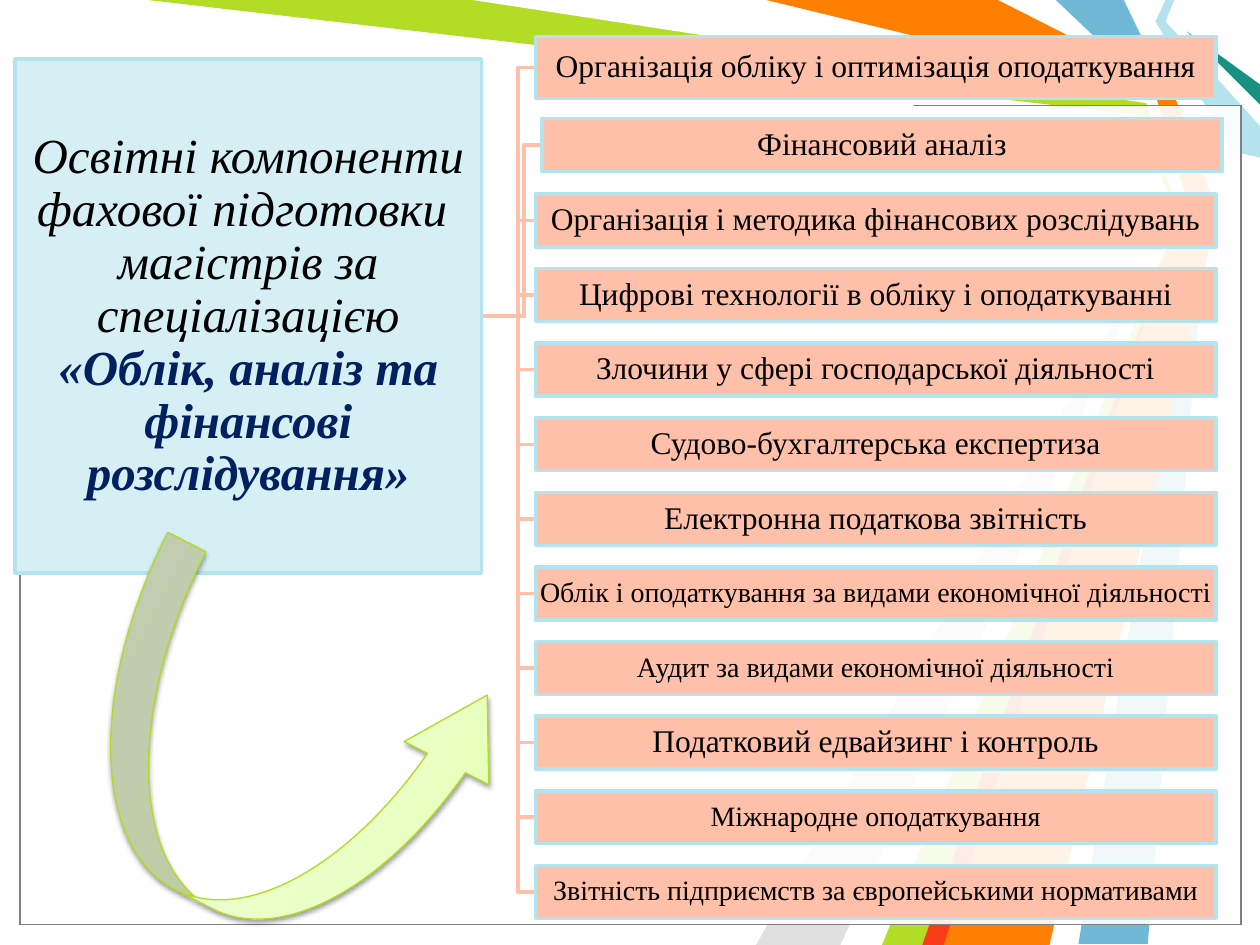
from pptx import Presentation
from pptx.dml.color import RGBColor
from pptx.enum.shapes import MSO_SHAPE as Preset
from pptx.enum.text import MSO_ANCHOR as Anchor, MSO_AUTO_SIZE as AutoSize, PP_ALIGN as Align
from pptx.oxml import parse_xml
from pptx.oxml.ns import nsdecls, qn
from pptx.util import Inches, Pt

FONT = "Times New Roman"
COLORS = {
    "blue": "6FB9D7", "lime": "B3DC27", "grey": "E0E0E0", "white": "FFFFFF",
    "pale_blue": "B4E3EE", "teal": "189180", "orange": "FF7F00", "red": "F93D17",
    "black": "000000", "frame": "808080", "peach": "FFC0AA", "topic": "D6EFF5",
    "navy": "002060", "arrow_line": "B1DC22",
}

TOPIC = [
    [("Освітні компоненти фахової підготовки ", "black", False)],
    [("магістрів за спеціалізацією ", "black", False),
     ("«Облік, аналіз та фінансові розслідування»", "navy", True)],
]
COURSES = [
    ("Організація обліку і оптимізація оподаткування", 18),
    ("Фінансовий аналіз", 18),
    ("Організація і методика фінансових розслідувань", 18),
    ("Цифрові технології в обліку і оподаткуванні", 18),
    ("Злочини у сфері господарської діяльності", 18),
    ("Судово-бухгалтерська експертиза", 18),
    ("Електронна податкова звітність", 18),
    ("Облік і оподаткування за видами економічної діяльності", 16),
    ("Аудит за видами економічної діяльності", 16),
    ("Податковий едвайзинг і контроль", 18),
    ("Міжнародне оподаткування", 16),
    ("Звітність підприємств за європейськими нормативами", 16),
]
RIBBONS = [
    ("blue", [(8.92, 0), (9.29, 0.77), (9.58, 1.67), (9.11, 7.49), (8.56, 7.49),
              (9.5, 1.67), (9.17, 0.75), (8.38, 0)]),
    ("lime", [(1.17, 0), (3.83, 0), (9.14, 0.78), (9.42, 1.69), (7.42, 7.5),
              (6.92, 7.5), (9.35, 1.73), (9.01, 0.91)]),
    ("grey", [(6.67, 7.5), (9.27, 1.81), (6, 7.5)]),
    ("white", [(3.75, 0), (9.1, 0.82), (9.32, 1.62), (6.75, 7.5), (7, 7.5),
               (9.41, 1.58), (9.17, 0.75), (6, 0)]),
    ("pale_blue", [(9.25, 0), (9.17, 0.17), (9.78, 1.2), (10, 1.25), (10, 1),
                   (9.25, 0.17), (9.32, 0)]),
    ("teal", [(10, 0.83), (9.42, 0.25), (10, 0.67)]),
    ("orange", [(6.08, 0), (7.92, 0), (9.3, 0.7), (9.66, 1.69), (8.33, 7.5),
                (7.33, 7.5), (9.42, 1.58), (9.17, 0.75)]),
    ("red", [(7.32, 7.5), (9.32, 1.83), (7.49, 7.5)]),
]
TOPIC_AREA = (0.12, 0.47, 3.7, 4.08)
PANEL_AREA = (0.16, 0.84, 9.69, 6.5)
COURSE_LEFT, COURSE_WIDTH, COURSE_HEIGHT = 4.25, 5.4, 0.42
FIRST_ROW, ROW_STEP = 1.54, 0.592
ELBOW_GAP = 0.14
ARROW_STOPS = [(0, "E2FFAD"), (35, "EAFFC5"), (100, "F7FFE9")]


def rgb(name):
    return RGBColor.from_string(COLORS[name])


def paint(shape, fill=None, line=None, width=2):
    """Set fill and line by colour name; None means neither is drawn."""
    if fill:
        shape.fill.solid()
        shape.fill.fore_color.rgb = rgb(fill)
    else:
        shape.fill.background()
    if line:
        shape.line.color.rgb = rgb(line)
        shape.line.width = Pt(width)
    else:
        shape.line.fill.background()


def add_preset(shapes, preset, area):
    shape = shapes.add_shape(preset, *map(Inches, area))
    shape.shadow.inherit = False
    return shape


def add_outline(shapes, points, close):
    corners = [(Inches(x), Inches(y)) for x, y in points]
    builder = shapes.build_freeform(*corners[0])
    builder.add_line_segments(corners[1:], close=close)
    shape = builder.convert_to_shape()
    shape.shadow.inherit = False
    return shape


def write(shape, paragraphs, size, inset, italic=False):
    """Fill a shape with paragraphs given as lists of (text, colour, bold)."""
    frame = shape.text_frame
    frame.word_wrap = True
    frame.auto_size = AutoSize.NONE
    frame.vertical_anchor = Anchor.MIDDLE
    frame.margin_left = frame.margin_right = Inches(inset)
    frame.margin_top = frame.margin_bottom = Inches(inset)
    for index, spans in enumerate(paragraphs):
        para = frame.add_paragraph() if index else frame.paragraphs[0]
        para.alignment = Align.CENTER
        para.line_spacing = 0.9
        para.space_before = Pt(0)
        for text, color, bold in spans:
            span = para.add_run()
            span.text = text
            font = span.font
            font.name, font.size = FONT, Pt(size)
            font.bold, font.italic = bold, italic
            font.color.rgb = rgb(color)


def add_background(shapes):
    for color, points in RIBBONS:
        paint(add_outline(shapes, points, True), color)
    for line in ("black", "frame"):
        panel = add_preset(shapes, Preset.RECTANGLE, PANEL_AREA)
        paint(panel, "white", line, 0.75)
        tint = panel._element.spPr.find(qn("a:solidFill"))[0]
        tint.append(parse_xml(f'<a:alpha {nsdecls("a")} val="69000"/>'))
    paint(add_preset(shapes, Preset.RECTANGLE, (0.42, 0.74, 6.83, 0.17)), "white")


def course_area(index):
    if index == 0:
        return COURSE_LEFT, 0.29, COURSE_WIDTH, 0.49
    if index == 1:
        return COURSE_LEFT + 0.05, 0.94, COURSE_WIDTH, COURSE_HEIGHT
    top = FIRST_ROW + (index - 2) * ROW_STEP
    return COURSE_LEFT, top, COURSE_WIDTH, COURSE_HEIGHT


def add_hierarchy(shapes):
    left, top, width, height = TOPIC_AREA
    start_x, start_y = left + width, top + height / 2
    areas = [course_area(index) for index in range(len(COURSES))]
    for x, y, _, row_height in reversed(areas):
        middle, bend = y + row_height / 2, x - ELBOW_GAP
        points = [(start_x, start_y), (bend, start_y), (bend, middle), (x, middle)]
        paint(add_outline(shapes, points, False), line="peach")

    topic = shapes.title
    shapes._spTree.append(topic._element)  # bring in front of the ribbons
    topic.left, topic.top, topic.width, topic.height = map(Inches, TOPIC_AREA)
    paint(topic, "topic", "pale_blue")
    write(topic, TOPIC, 28, 0.02, italic=True)

    for (name, size), area in zip(COURSES, areas):
        box = add_preset(shapes, Preset.RECTANGLE, area)
        paint(box, "peach", "pale_blue")
        write(box, [[(name, "black", False)]], size, 0.01)


def add_curved_arrow(shapes):
    arrow = add_preset(shapes, Preset.CURVED_RIGHT_ARROW, (0.95, 4.46, 2.5, 3.22))
    arrow.rotation = 297
    for index, value in enumerate((0.135, 0.301, 0.251)):
        arrow.adjustments[index] = value
    stops = "".join(f'<a:gs pos="{pos * 1000}"><a:srgbClr val="{color}"/></a:gs>'
                    for pos, color in ARROW_STOPS)
    properties = arrow._element.spPr
    properties.find(qn("a:prstGeom")).addnext(parse_xml(
        f'<a:gradFill {nsdecls("a")} rotWithShape="1"><a:gsLst>{stops}</a:gsLst>'
        '<a:lin ang="16200000" scaled="1"/></a:gradFill>'))
    arrow.line.color.rgb = rgb("arrow_line")
    arrow.line.width = Pt(0.75)
    properties.find(qn("a:effectLst")).append(parse_xml(
        f'<a:outerShdw {nsdecls("a")} blurRad="{Pt(3.1)}" dist="{Pt(1.6)}" '
        f'dir="5400000" rotWithShape="0"><a:srgbClr val="{COLORS["black"]}">'
        '<a:alpha val="38000"/></a:srgbClr></a:outerShdw>'))


def main():
    deck = Presentation()
    deck.slide_width, deck.slide_height = Inches(10), Inches(7.5)
    page = deck.slides.add_slide(deck.slide_layouts[5])
    add_background(page.shapes)
    add_hierarchy(page.shapes)
    add_curved_arrow(page.shapes)
    deck.save("out.pptx")


if __name__ == "__main__":
    main()
